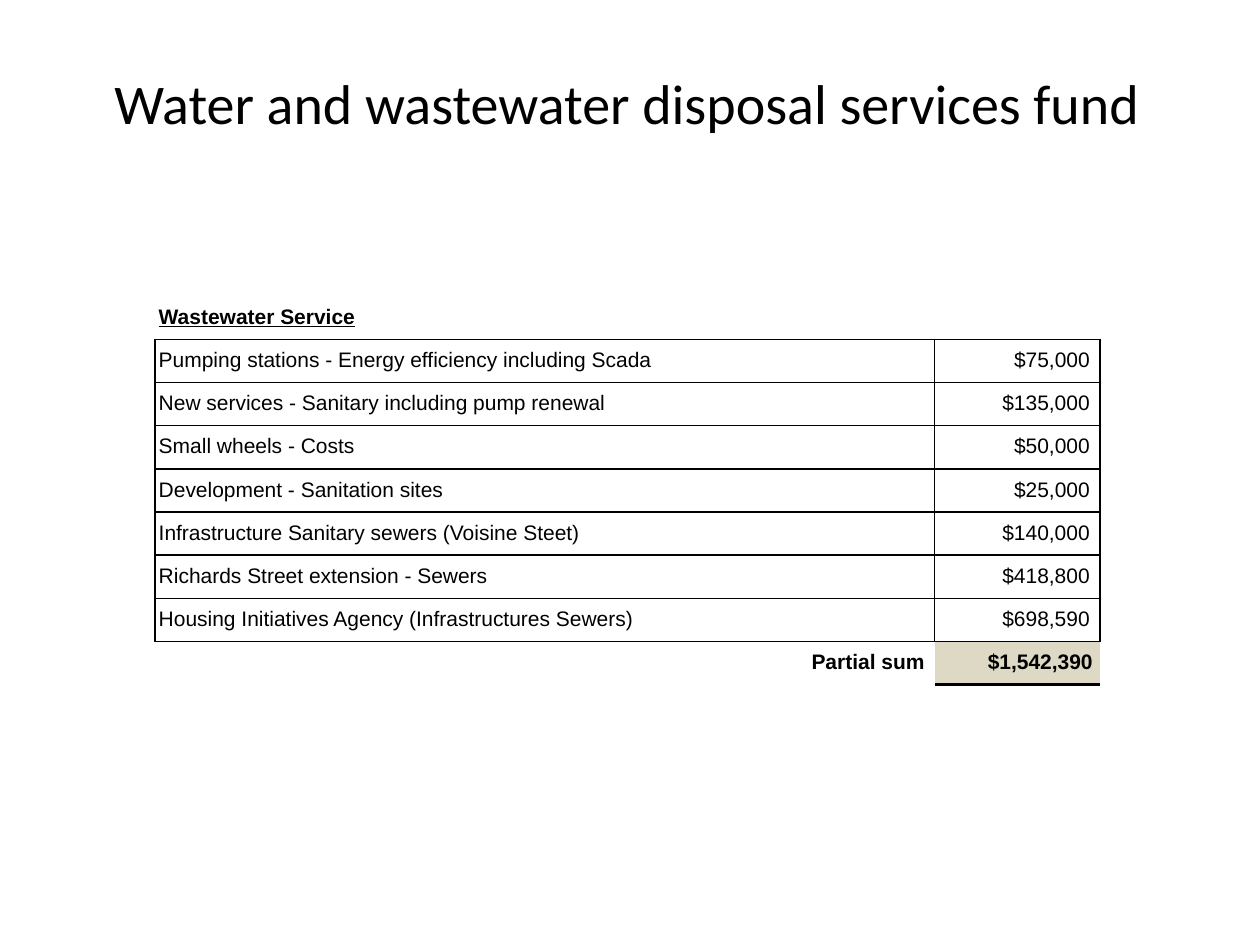
from lxml import etree
from pptx import Presentation
from pptx.dml.color import RGBColor
from pptx.enum import text
from pptx.oxml import ns
from pptx.util import Cm, Pt

TITLE = "Water and wastewater disposal services fund"
HEADING = "Wastewater Service"
ITEMS = [
    ("Pumping stations - Energy efficiency including Scada", "$75,000"),
    ("New services - Sanitary including pump renewal", "$135,000"),
    ("Small wheels - Costs", "$50,000"),
    ("Development - Sanitation sites", "$25,000"),
    ("Infrastructure Sanitary sewers (Voisine Steet)", "$140,000"),
    ("Richards Street extension - Sewers", "$418,800"),
    ("Housing Initiatives Agency (Infrastructures Sewers)", "$698,590"),
]
TOTAL = ("Partial sum", "$1,542,390")

BLACK = RGBColor(0x00, 0x00, 0x00)
SAND = RGBColor(0xDD, 0xD9, 0xC4)

COLUMN_WIDTHS = (Cm(15.72), Cm(3.33))
ROW_HEIGHT = Cm(0.87)
LEFT_PAD, RIGHT_PAD, TOTAL_PAD = Cm(0.08), Cm(0.2), Cm(0.14)


def set_borders(cell, widths):
    """Draw the sides given in points (L, R, T, B) and hide the others."""
    properties = cell._tc.get_or_add_tcPr()
    for side in "LRTB":
        line = etree.SubElement(properties, ns.qn(f"a:ln{side}"))
        if side in widths:
            line.set("w", str(Pt(widths[side])))
            fill = etree.SubElement(line, ns.qn("a:solidFill"))
            etree.SubElement(fill, ns.qn("a:srgbClr"), val=str(BLACK))
        else:
            etree.SubElement(line, ns.qn("a:noFill"))


def fill_cell(cell, words, right=False, bold=False, underline=False):
    cell.margin_top = cell.margin_bottom = 0
    cell.margin_left = LEFT_PAD
    cell.margin_right = RIGHT_PAD if right else 0
    cell.vertical_anchor = text.MSO_ANCHOR.MIDDLE
    para = cell.text_frame.paragraphs[0]
    para.text = words
    para.alignment = text.PP_ALIGN.RIGHT if right else text.PP_ALIGN.LEFT
    para.line_spacing = Pt(12.6)
    font = para.font
    font.name, font.size, font.color.rgb = "Arial", Pt(12), BLACK
    font.bold, font.underline = bold, underline


def add_title(page):
    title = page.shapes.title
    title.left, title.top, title.width, title.height = Cm(0.76), Cm(1.02), Cm(23.77), Cm(2.08)
    title.text_frame.vertical_anchor = text.MSO_ANCHOR.MIDDLE
    para = title.text_frame.paragraphs[0]
    para.text = TITLE
    para.alignment = text.PP_ALIGN.CENTER
    para.font.name, para.font.size, para.font.color.rgb = "Calibri", Pt(32), BLACK


def add_budget_table(page):
    rows = [(HEADING, ""), *ITEMS, TOTAL]
    last = len(rows) - 1
    table = page.shapes.add_table(
        len(rows), 2, Cm(3.12), Cm(5.97), sum(COLUMN_WIDTHS), ROW_HEIGHT * len(rows)
    ).table
    table.first_row = table.horz_banding = False
    for column, width in zip(table.columns, COLUMN_WIDTHS):
        column.width = width

    for r, row in enumerate(rows):
        table.rows[r].height = ROW_HEIGHT
        for c, words in enumerate(row):
            cell = table.cell(r, c)
            fill_cell(cell, words, right=c == 1 or r == last,
                      bold=r in (0, last), underline=r == 0)
            if r == 0:
                borders = {"B": 1}
            elif r < last:
                borders = dict.fromkeys("LRTB", 1)
            else:
                borders = {"T": 1, "B": 1.5} if c else {"T": 1}
            set_borders(cell, borders)
            cell.fill.background()

    total = table.cell(last, 1)
    total.margin_right = TOTAL_PAD
    total.fill.solid()
    total.fill.fore_color.rgb = SAND


def main():
    deck = Presentation()
    deck.slide_width, deck.slide_height = Cm(25.4), Cm(19.05)
    page = deck.slides.add_slide(deck.slide_layouts[5])
    add_title(page)
    add_budget_table(page)
    deck.save("out.pptx")


if __name__ == "__main__":
    main()
